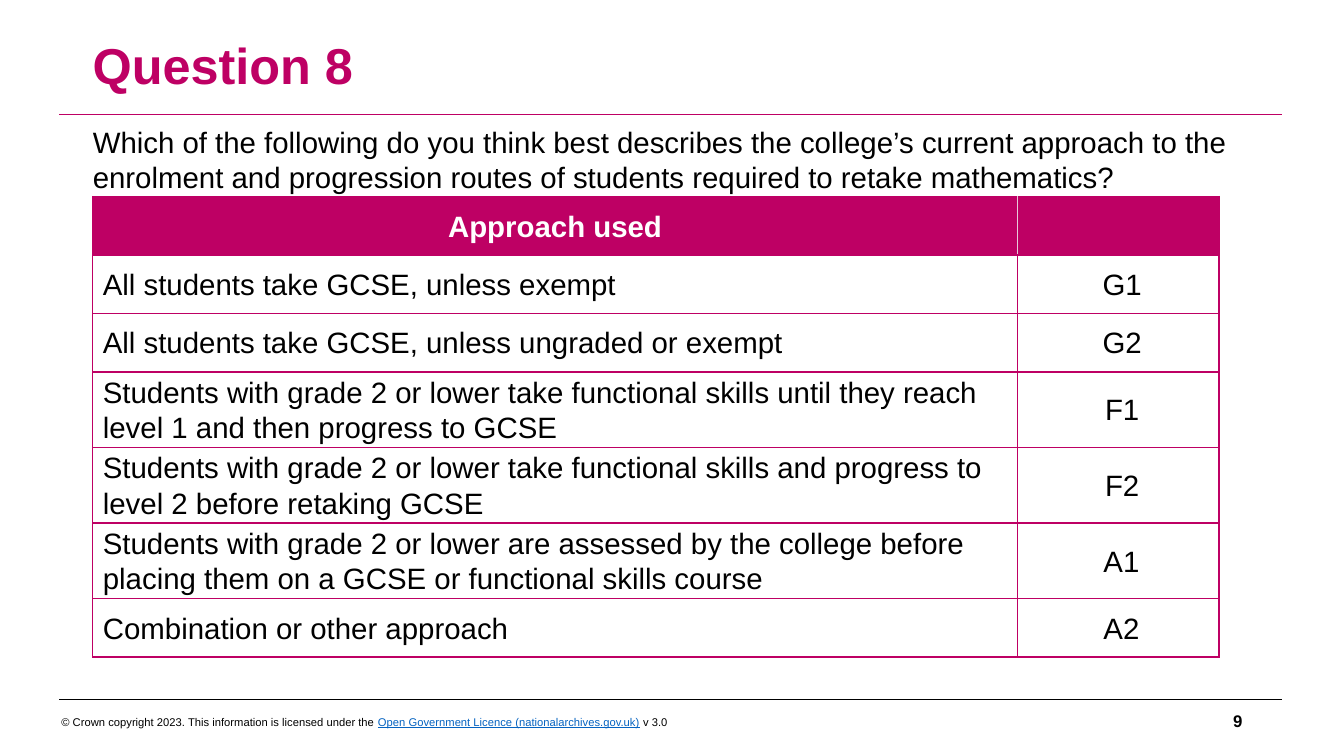
from lxml.etree import SubElement
from pptx import Presentation
from pptx.dml.color import RGBColor
from pptx.enum.shapes import MSO_CONNECTOR
from pptx.enum.text import MSO_ANCHOR, PP_ALIGN
from pptx.oxml import parse_xml
from pptx.oxml.ns import nsdecls, qn
from pptx.util import Inches, Pt

# Content
PINK, PALE, BLACK, WHITE, BLUE = "BE0064", "E6C8D9", "000000", "FFFFFF", "0563C1"
TITLE = "Question 8"
QUERY = ("Which of the following do you think best describes the college’s current "
         "approach to the enrolment and progression routes of students required to "
         "retake mathematics?")
ROWS = [
    ("Approach used", ""),
    ("All students take GCSE, unless exempt", " G1"),
    ("All students take GCSE, unless ungraded or exempt", " G2"),
    ("Students with grade 2 or lower take functional skills until they reach "
     "level 1 and then progress to GCSE", " F1"),
    ("Students with grade 2 or lower take functional skills and progress to "
     "level 2 before retaking GCSE", " F2"),
    ("Students with grade 2 or lower are assessed by the college before "
     "placing them on a GCSE or functional skills course", " A1"),
    ("Combination or other approach", " A2"),
]
COLS = (9.17, 2)
ROW_H = 0.58
FOOTER = [
    ("© Crown copyright 2023. This information is licensed under the ", BLACK, False),
    ("Open Government Licence (nationalarchives.gov.uk)", BLUE, True),
    (" v 3.0", BLACK, False),
]
PAGE = "9"
RULES = [(6.94, BLACK), (1.14, PINK)]


def color(code):
    return RGBColor.from_string(code)


def style(run, size, code, bold=False, under=False):
    font = run.font
    font.name, font.size = "Arial", Pt(size)
    font.bold, font.underline = bold, under
    font.color.rgb = color(code)


def add_text(box, parts, size, bold=False, anchor=MSO_ANCHOR.MIDDLE):
    frame = slide.shapes.add_textbox(*map(Inches, box)).text_frame
    frame.word_wrap = True
    frame.vertical_anchor = anchor
    for text, code, under in parts:
        run = frame.paragraphs[0].add_run()
        run.text = text
        style(run, size, code, bold, under)
    return frame


def add_border(cell, right, left):
    props = cell._tc.get_or_add_tcPr()
    sides = [("L", left), ("R", right), ("T", PINK), ("B", PINK)]
    for i, (side, code) in enumerate(sides):
        line = parse_xml(f'<a:ln{side} {nsdecls("a")} w="12700"><a:solidFill>'
                         f'<a:srgbClr val="{code}"/></a:solidFill></a:ln{side}>')
        props.insert(i, line)


deck = Presentation()
deck.slide_width, deck.slide_height = Inches(13.33), Inches(7.5)
slide = deck.slides.add_slide(deck.slide_layouts[6])

# Rules above and below the body
for y, code in RULES:
    rule = slide.shapes.add_connector(
        MSO_CONNECTOR.STRAIGHT, Inches(0.59), Inches(y), Inches(12.72), Inches(y))
    rule.line.color.rgb = color(code)
    rule.line.width = Pt(0.75)
    SubElement(rule._element.spPr, qn("a:effectLst"))

# Title and question
title = add_text((0.82, 0.12, 8.69, 1.11), [(TITLE, PINK, False)], 36, True)
title.paragraphs[0].line_spacing = 0.9
query = add_text((0.92, 1.23, 11.65, 0.71), [(QUERY, BLACK, False)], 21,
                 anchor=MSO_ANCHOR.TOP)
query.margin_left = query.margin_right = query.margin_top = query.margin_bottom = 0

# Table of approaches
table = slide.shapes.add_table(
    len(ROWS), len(COLS), Inches(0.92), Inches(1.95),
    Inches(sum(COLS)), Inches(ROW_H * len(ROWS))).table
for col, width in zip(table.columns, COLS):
    col.width = Inches(width)
for r, row in enumerate(ROWS):
    table.rows[r].height = Inches(ROW_H)
    head = r == 0
    inner = PALE if head else PINK
    for c, text in enumerate(row):
        cell = table.cell(r, c)
        if head:
            cell.fill.solid()
            cell.fill.fore_color.rgb = color(PINK)
        else:
            cell.fill.background()
        add_border(cell, PINK if c else inner, inner if c else PINK)
        cell.vertical_anchor = MSO_ANCHOR.MIDDLE
        cell.margin_left = cell.margin_right = Inches(0.1)
        cell.margin_top = cell.margin_bottom = 0
        para = cell.text_frame.paragraphs[0]
        para.text = text
        para.alignment = PP_ALIGN.CENTER if head or c else PP_ALIGN.LEFT
        para.line_spacing, para.space_after = 1.07, Pt(8)
        for run in para.runs:
            style(run, 21, WHITE if head else BLACK, head)

# Footer and page number
add_text((0.51, 7.01, 8.41, 0.3), FOOTER, 8)
page = add_text((9.42, 6.95, 3, 0.4), [(PAGE, BLACK, False)], 12, True)
page.paragraphs[0].alignment = PP_ALIGN.RIGHT

deck.save("out.pptx")
